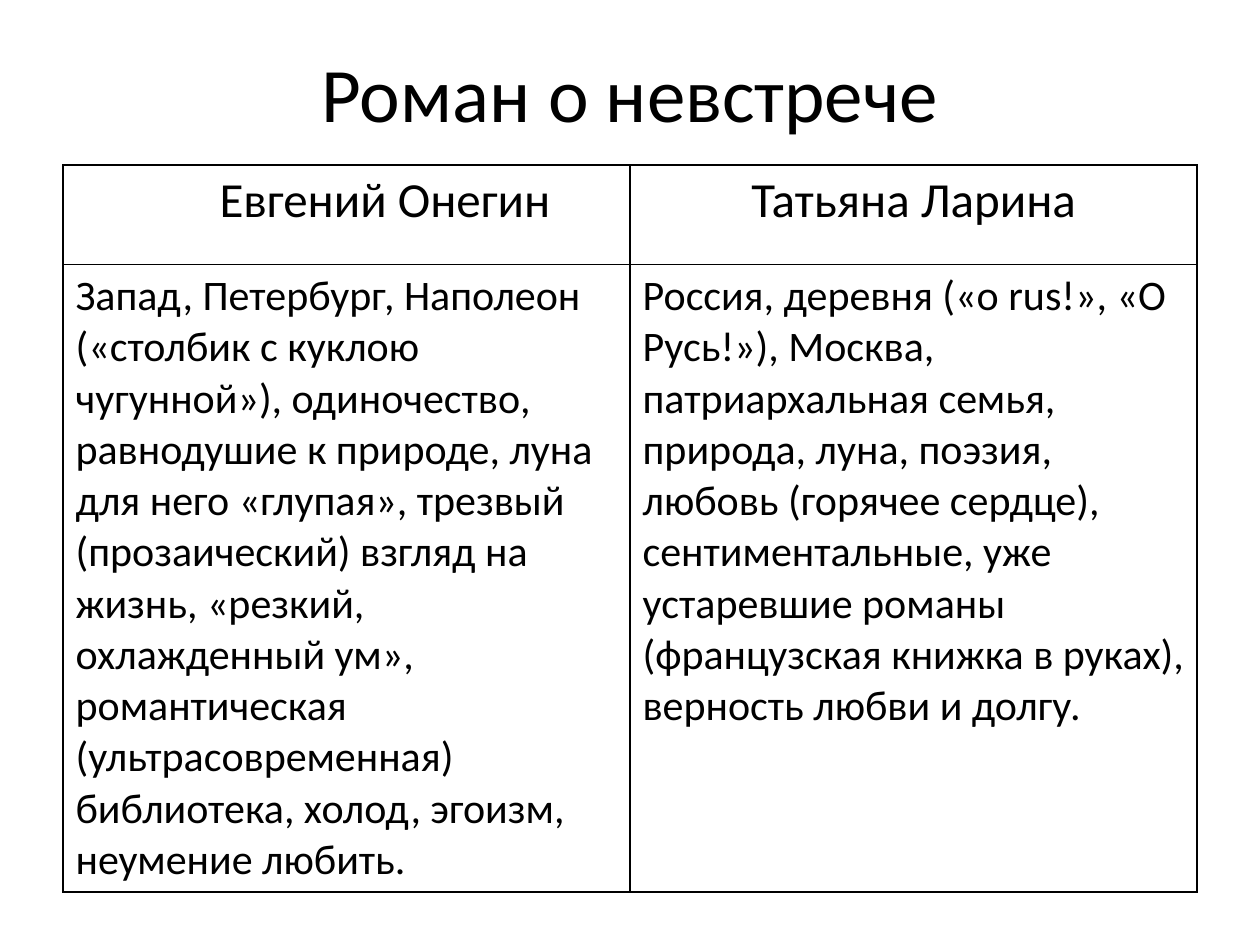
from lxml import etree
from pptx import Presentation
from pptx import util as u
from pptx.dml.color import RGBColor
from pptx.enum import text
from pptx.oxml import ns

FONT = "Calibri"
BLACK = "000000"
HEADERS = ["Евгений Онегин", "Татьяна Ларина"]
TRAITS = [
    "Запад, Петербург, Наполеон («столбик с куклою чугунной»), одиночество, "
    "равнодушие к природе, луна для него «глупая», трезвый (прозаический) "
    "взгляд на жизнь, «резкий, охлажденный ум», романтическая "
    " (ультрасовременная) библиотека, холод, эгоизм, неумение любить.",
    "Россия, деревня («o rus!», «О Русь!»), Москва, патриархальная семья, "
    "природа, луна, поэзия, любовь (горячее сердце), сентиментальные, уже "
    "устаревшие романы (французская книжка в руках), верность любви и долгу.",
]


def color(value):
    return RGBColor.from_string(value)


def write(text_frame, content, size, alignment):
    text_frame.text = content
    paragraph = text_frame.paragraphs[0]
    paragraph.alignment = alignment
    font = paragraph.runs[0].font
    font.name, font.size, font.bold = FONT, u.Pt(size), False
    font.color.rgb = color(BLACK)


def add_borders(cell, value, width):
    properties = cell._tc.get_or_add_tcPr()
    for position, side in enumerate(("lnL", "lnR", "lnT", "lnB")):
        line = etree.Element(ns.qn(f"a:{side}"), w=str(u.Pt(width)))
        fill = etree.SubElement(line, ns.qn("a:solidFill"))
        etree.SubElement(fill, ns.qn("a:srgbClr"), val=value)
        properties.insert(position, line)


def place_title(slide, left, top, width, height):
    title = slide.shapes.title
    title.left, title.top, title.width, title.height = left, top, width, height
    write(title.text_frame, "Роман о невстрече", 44, text.PP_ALIGN.CENTER)
    title.text_frame.vertical_anchor = text.MSO_ANCHOR.MIDDLE


def place_comparison(slide, left, top, width, height):
    table = slide.shapes.add_table(2, 2, left, top, width, height).table
    table.first_row = table.horz_banding = False
    table.rows[0].height = u.Inches(0.79)
    table.rows[1].height = height - u.Inches(0.79)

    rows = [
        (HEADERS, 28, text.PP_ALIGN.CENTER),
        (TRAITS, 24, text.PP_ALIGN.LEFT),
    ]
    for row, (contents, size, alignment) in enumerate(rows):
        for column, content in enumerate(contents):
            cell = table.cell(row, column)
            write(cell.text_frame, content, size, alignment)
            cell.fill.background()
            add_borders(cell, BLACK, 1)

    # The first heading sits right of its column's centre
    table.cell(0, 0).margin_left = u.Inches(0.71)


def main():
    presentation = Presentation()
    presentation.slide_width = u.Inches(10)
    presentation.slide_height = u.Inches(7.5)
    slide = presentation.slides.add_slide(presentation.slide_layouts[5])

    # Heading
    place_title(slide, u.Inches(0.5), u.Inches(0.3), u.Inches(9), u.Inches(0.85))
    # Comparison of the two characters
    place_comparison(slide, u.Inches(0.5), u.Inches(1.31), u.Inches(9), u.Inches(5.51))

    presentation.save("out.pptx")


if __name__ == "__main__":
    main()
